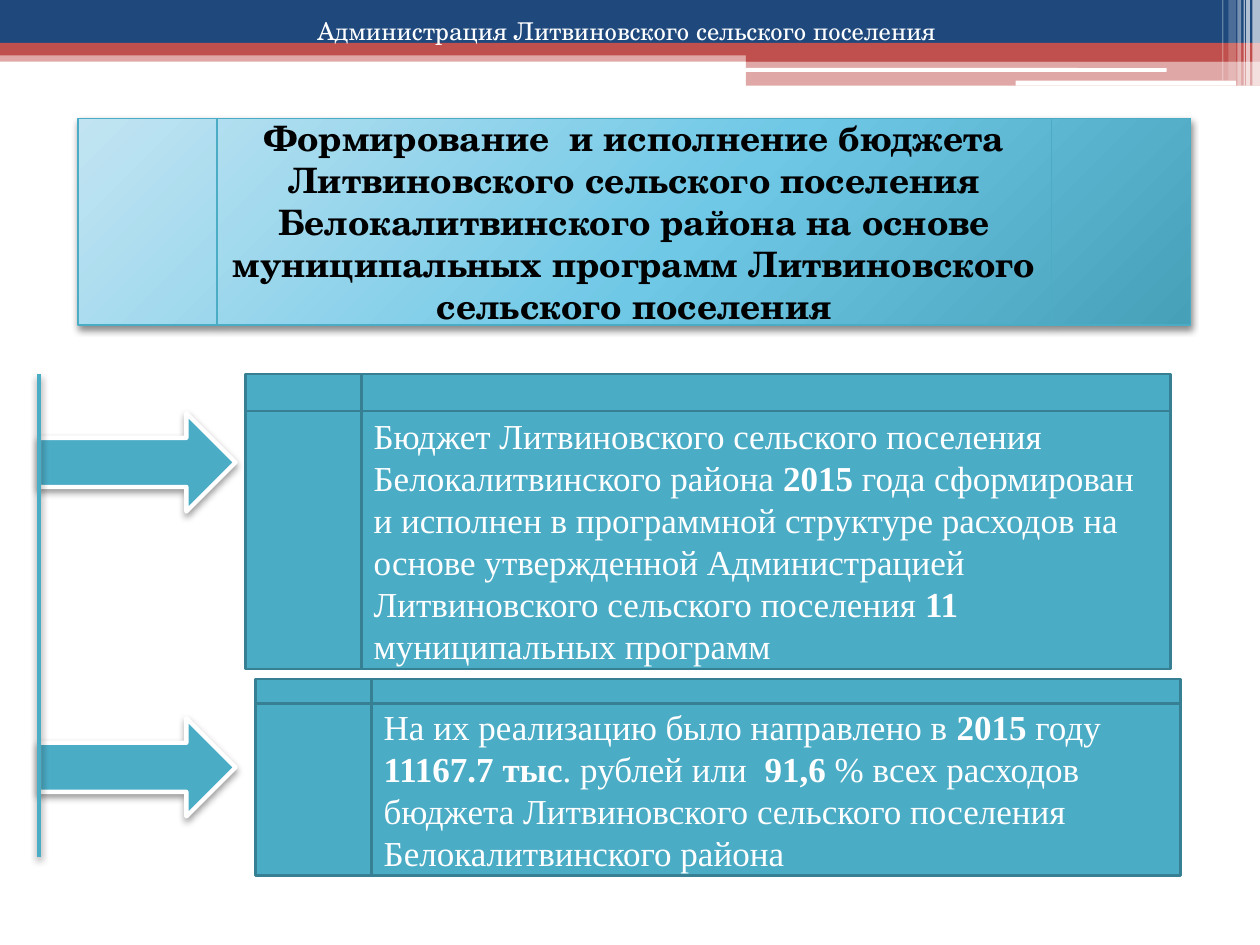
from lxml.etree import SubElement
from pptx import Presentation
from pptx.dml.color import RGBColor
from pptx.enum.shapes import MSO_CONNECTOR, MSO_SHAPE as Shape
from pptx.enum.text import MSO_ANCHOR, PP_ALIGN as Align
from pptx.oxml.ns import qn
from pptx.util import Inches, Pt

COLORS = {
    "navy": "1F497D", "red": "C0504D", "white": "FFFFFF", "black": "000000",
    "teal": "4BACC6", "edge": "377F92",
    "light": "C2E4F2", "middle": "6FC8E6", "deep": "46A0B8",
}
SERIF = "Times New Roman"
SCHOOL = "TeX Gyre Schola"


def add_block(kind, at, color, opacity=100, line=None):
    block = page.shapes.add_shape(kind, *map(Inches, at))
    block.shadow.inherit = False
    block.fill.solid()
    block.fill.fore_color.rgb = RGBColor.from_string(COLORS[color])
    if opacity < 100:
        tint = block.element.spPr.find(qn("a:solidFill"))[0]
        SubElement(tint, qn("a:alpha"), val=str(opacity * 1000))
    if line:
        block.line.color.rgb = RGBColor.from_string(COLORS[line[0]])
        block.line.width = Pt(line[1])
    else:
        block.line.fill.background()
    return block


def write_text(box, paragraphs, font, size, color, align=Align.LEFT):
    frame = box.text_frame
    frame.word_wrap = True
    frame.vertical_anchor = MSO_ANCHOR.MIDDLE
    for index, spans in enumerate(paragraphs):
        para = frame.add_paragraph() if index else frame.paragraphs[0]
        para.alignment = align
        for text, bold in spans:
            span = para.add_run()
            span.text = text
            for name, value in {"name": font, "size": Pt(size), "bold": bold}.items():
                setattr(span.font, name, value)
            span.font.color.rgb = RGBColor.from_string(COLORS[color])


deck = Presentation()
deck.slide_width, deck.slide_height = Inches(10), Inches(7.5)
page = deck.slides.add_slide(deck.slide_layouts[6])

for at, color, opacity in [
    ((0, 0.4, 10, 0.09), "red", 50),
    ((0, 0, 10, 0.34), "navy", 100),
    ((0, 0.34, 10, 0.1), "red", 100),
    ((5.92, 0.39, 4.08, 0.1), "red", 100),
    ((5.92, 0.48, 4.08, 0.2), "red", 50),
]:
    add_block(Shape.RECTANGLE, at, color, opacity)

for at in [(5.91, 0.54, 3.35, 0.03), (8.06, 0.64, 1.75, 0.04)]:
    add_block(Shape.ROUNDED_RECTANGLE, at, "white")

for left, width, height, opacity in [
    (9.94, 0.06, 0.68, 65), (9.89, 0.03, 0.68, 65), (9.87, 0.01, 0.68, 60),
    (9.82, 0.03, 0.68, 40), (9.75, 0.06, 0.64, 20), (9.7, 0.01, 0.64, 30),
]:
    add_block(Shape.RECTANGLE, (left, 0, width, height), "white", opacity)

title = page.shapes.add_textbox(*map(Inches, (2.42, -0.23, 12.36, 0.94)))
write_text(title, [[("Администрация Литвиновского сельского поселения", False)]],
           SCHOOL, 14, "white")

banner = add_block(Shape.FLOWCHART_PREDEFINED_PROCESS, (0.62, 0.94, 8.83, 1.64), "teal",
                   line=("teal", 0.75))
banner.fill.gradient()
gradient = banner.element.spPr.find(qn("a:gradFill"))
for child in list(gradient):
    gradient.remove(child)
stops = SubElement(gradient, qn("a:gsLst"))
for position, color in [(0, "light"), (55, "middle"), (100, "deep")]:
    stop = SubElement(stops, qn("a:gs"), pos=str(position * 1000))
    SubElement(stop, qn("a:srgbClr"), val=COLORS[color])
route = SubElement(gradient, qn("a:path"), path="circle")
SubElement(route, qn("a:fillToRect"), l="-40000", t="-90000", r="140000", b="190000")
write_text(banner, [[(
    "Формирование  и исполнение бюджета Литвиновского сельского поселения "
    "Белокалитвинского района на основе муниципальных программ "
    "Литвиновского сельского поселения", True)]], SCHOOL, 20, "black", Align.CENTER)

shadowed = [(banner, 45, 4)]
for arrow_top, at, paragraphs in [
    (3.28, (1.95, 2.97, 7.34, 2.34), [[
        ("Бюджет Литвиновского сельского поселения Белокалитвинского района ", False),
        ("2015", True),
        (" года сформирован и исполнен в программной структуре расходов на основе "
         "утвержденной Администрацией Литвиновского сельского поселения ", False),
        ("11 ", True),
        ("муниципальных программ", False),
    ]]),
    (5.7, (2.03, 5.39, 7.34, 1.56), [
        [("На их реализацию было направлено в ", False), ("2015", True), (" году", False)],
        [("11167.7 тыс", True), (". рублей или  ", False), ("91,6 ", True),
         ("% всех расходов  бюджета Литвиновского сельского поселения "
          "Белокалитвинского района", False)],
    ]),
]:
    arrow = add_block(Shape.RIGHT_ARROW, (0.31, arrow_top, 1.56, 0.78), "teal",
                      line=("white", 2.5))
    shadowed.append((arrow, 40, 4.1))
    panel = add_block(Shape.FLOWCHART_INTERNAL_STORAGE, at, "teal", line=("edge", 1.5))
    write_text(panel, paragraphs, SERIF, 20, "white")

spine = page.shapes.add_connector(MSO_CONNECTOR.STRAIGHT,
                                  *map(Inches, (0.31, 2.97, 0.31, 6.8)))
spine.line.color.rgb = RGBColor.from_string(COLORS["teal"])
spine.line.width = Pt(2.5)
SubElement(spine.element.spPr, qn("a:effectLst"))
shadowed.append((spine, 45, 4))

for item, opacity, blur in shadowed:
    effects = item.element.spPr.find(qn("a:effectLst"))
    shadow = SubElement(effects, qn("a:outerShdw"), blurRad=str(Pt(blur)),
                        dist=str(Pt(2)), dir="5400000", rotWithShape="0")
    shade = SubElement(shadow, qn("a:srgbClr"), val=COLORS["black"])
    SubElement(shade, qn("a:alpha"), val=str(opacity * 1000))

deck.save("out.pptx")
